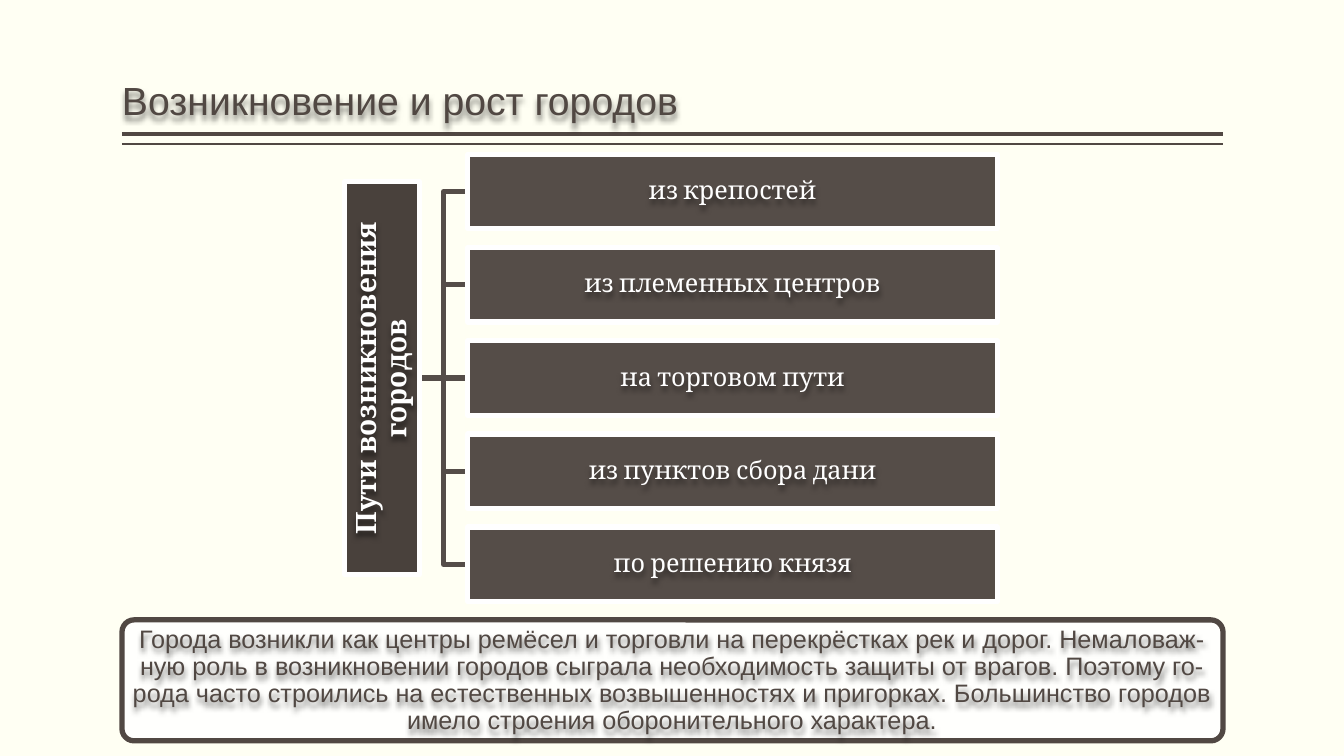
from lxml import etree
from pptx import Presentation
from pptx.dml.color import RGBColor
from pptx.enum.shapes import MSO_CONNECTOR, MSO_SHAPE
from pptx.enum.text import MSO_ANCHOR, PP_ALIGN
from pptx.oxml import parse_xml
from pptx.oxml.ns import nsdecls, qn
from pptx.util import Inches, Pt

CREAM = RGBColor(0xFF, 0xFF, 0xF3)
WHITE = RGBColor(0xFF, 0xFF, 0xFF)
BROWN = RGBColor(0x51, 0x48, 0x43)
BRANCH_BROWN = RGBColor(0x55, 0x4D, 0x48)
ROOT_BROWN = RGBColor(0x49, 0x41, 0x3C)

LEFT, WIDTH = 1.21, 10.92
BORDER = 3.78
BOX_HEIGHT = 0.74
BRANCH_LEFT, BRANCH_TOP, BRANCH_WIDTH, BRANCH_STEP = 4.64, 1.53, 5.25, 0.925
ROOT_BOX = (1.84, 3.38, 3.9, BOX_HEIGHT)
ROOT_EDGE, TRUNK_X, ROOT_Y = 4.16, 4.4, 3.75

TITLE = "Возникновение и рост городов"
ROOT = "Пути возникновения городов"
BRANCHES = [
    "из крепостей",
    "из племенных центров",
    "на торговом пути",
    "из пунктов сбора дани",
    "по решению князя",
]
SUMMARY = (
    "Города возникли как центры ремёсел и торговли на перекрёстках рек и дорог. Немаловаж- "
    "ную роль в возникновении городов сыграла необходимость защиты от врагов. Поэтому го- "
    "рода часто строились на естественных возвышенностях и пригорках. Большинство городов "
    "имело строения оборонительного характера."
)


class SlideBuilder:
    def __init__(self, slide, body_font="Arial", diagram_font="Cambria"):
        self.slide = slide
        self.shapes = slide.shapes
        self.body_font = body_font
        self.diagram_font = diagram_font

    def background(self, color):
        fill = self.slide.background.fill
        fill.solid()
        fill.fore_color.rgb = color

    def rule(self, y, weight):
        line = self.shapes.add_connector(
            MSO_CONNECTOR.STRAIGHT, Inches(LEFT), Inches(y), Inches(LEFT + WIDTH), Inches(y))
        line.line.color.rgb = BROWN
        line.line.width = Pt(weight)
        etree.SubElement(line._element.spPr, qn("a:effectLst"))

    def panel(self, box, fill, border, preset=MSO_SHAPE.RECTANGLE, rotation=0):
        shape = self.shapes.add_shape(preset, *map(Inches, box))
        shape.shadow.inherit = False
        shape.rotation = rotation
        shape.fill.solid()
        shape.fill.fore_color.rgb = fill
        shape.line.color.rgb = border
        shape.line.width = Pt(BORDER)
        return shape

    def text(self, box, words, size, color, font, margins, bold=False, rotation=0,
             align=PP_ALIGN.CENTER, anchor=MSO_ANCHOR.MIDDLE):
        """Add text with a soft shadow; margins are horizontal and vertical."""
        shape = self.shapes.add_textbox(*map(Inches, box))
        shape.rotation = rotation
        frame = shape.text_frame
        frame.word_wrap = True
        frame.vertical_anchor = anchor
        frame.margin_left = frame.margin_right = Inches(margins[0])
        frame.margin_top = frame.margin_bottom = Inches(margins[1])
        frame.text = words
        paragraph = frame.paragraphs[0]
        paragraph.alignment = align
        paragraph.line_spacing = 0.9
        style = paragraph.runs[0].font
        style.name, style.size, style.bold = font, Pt(size), bold
        style.color.rgb = color
        shape._element.spPr.append(parse_xml(
            f'<a:effectLst {nsdecls("a")}><a:outerShdw blurRad="50800" dist="38100" '
            'dir="5400000" rotWithShape="0"><a:srgbClr val="000000"><a:alpha val="50000"/>'
            '</a:srgbClr></a:outerShdw></a:effectLst>'))

    def diagram_box(self, box, words, size, fill, bold=False, rotation=0):
        self.panel(box, fill, WHITE, rotation=rotation)
        self.text(box, words, size, WHITE, self.diagram_font, (0.01, 0.01), bold, rotation)

    def bracket(self, y):
        """Draw the line from the root box to the branch centred at y."""
        points = [(TRUNK_X, ROOT_Y), (TRUNK_X, y), (BRANCH_LEFT, y)]
        if abs(y - ROOT_Y) < 0.01:
            points = [(BRANCH_LEFT, ROOT_Y)]
        builder = self.shapes.build_freeform(Inches(ROOT_EDGE), Inches(ROOT_Y))
        builder.add_line_segments([(Inches(px), Inches(py)) for px, py in points], close=False)
        shape = builder.convert_to_shape()
        shape.shadow.inherit = False
        shape.fill.background()
        shape.line.color.rgb = BRANCH_BROWN
        shape.line.width = Pt(BORDER)

    def summary(self, words):
        panel = self.panel((LEFT, 6.15, WIDTH, 1.2), WHITE, BROWN, MSO_SHAPE.ROUNDED_RECTANGLE)
        panel.adjustments[0] = 0.1
        color = panel._element.spPr.find(qn("a:solidFill"))[0]
        etree.SubElement(color, qn("a:alpha"), val="90000")
        self.text((1.23, 6.19, 10.87, 1.13), words, 18, BROWN, self.body_font, (0.04, 0.02))


def main():
    presentation = Presentation()
    presentation.slide_width = Inches(13.33)
    presentation.slide_height = Inches(7.5)
    builder = SlideBuilder(presentation.slides.add_slide(presentation.slide_layouts[6]))

    builder.background(CREAM)
    builder.rule(1.33, 3)
    builder.rule(1.43, 1)
    builder.text((LEFT, 0.08, WIDTH, 1.2), TITLE, 28, BROWN, builder.body_font, (0, 0.05),
                 align=PP_ALIGN.LEFT, anchor=MSO_ANCHOR.BOTTOM)
    builder.summary(SUMMARY)

    tops = [BRANCH_TOP + BRANCH_STEP * row for row in range(len(BRANCHES))]
    for top in tops:
        builder.bracket(top + BOX_HEIGHT / 2)
    builder.diagram_box(ROOT_BOX, ROOT, 20, ROOT_BROWN, bold=True, rotation=270)
    for top, words in zip(tops, BRANCHES):
        builder.diagram_box((BRANCH_LEFT, top, BRANCH_WIDTH, BOX_HEIGHT), words, 18, BRANCH_BROWN)

    presentation.save("out.pptx")


if __name__ == "__main__":
    main()
